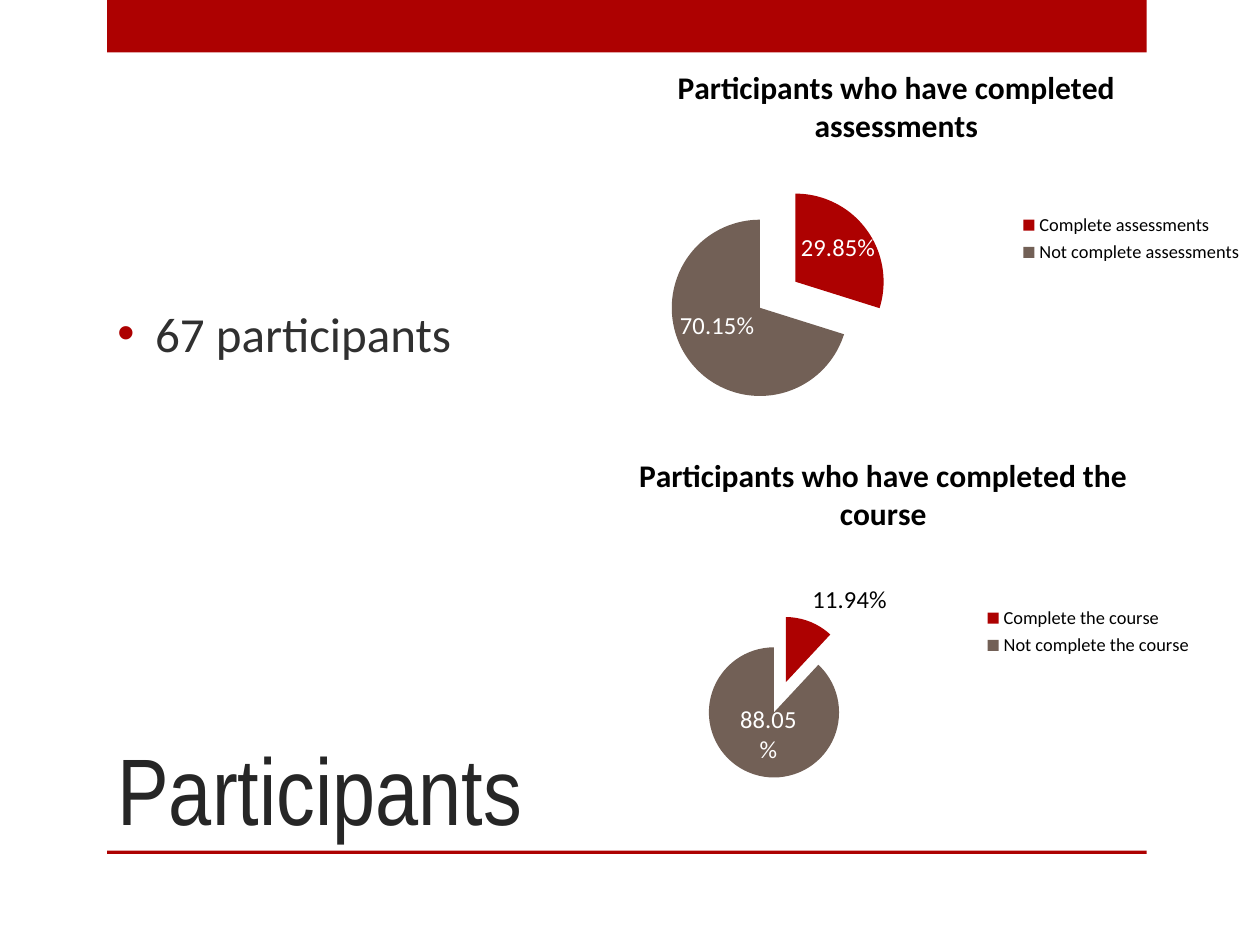
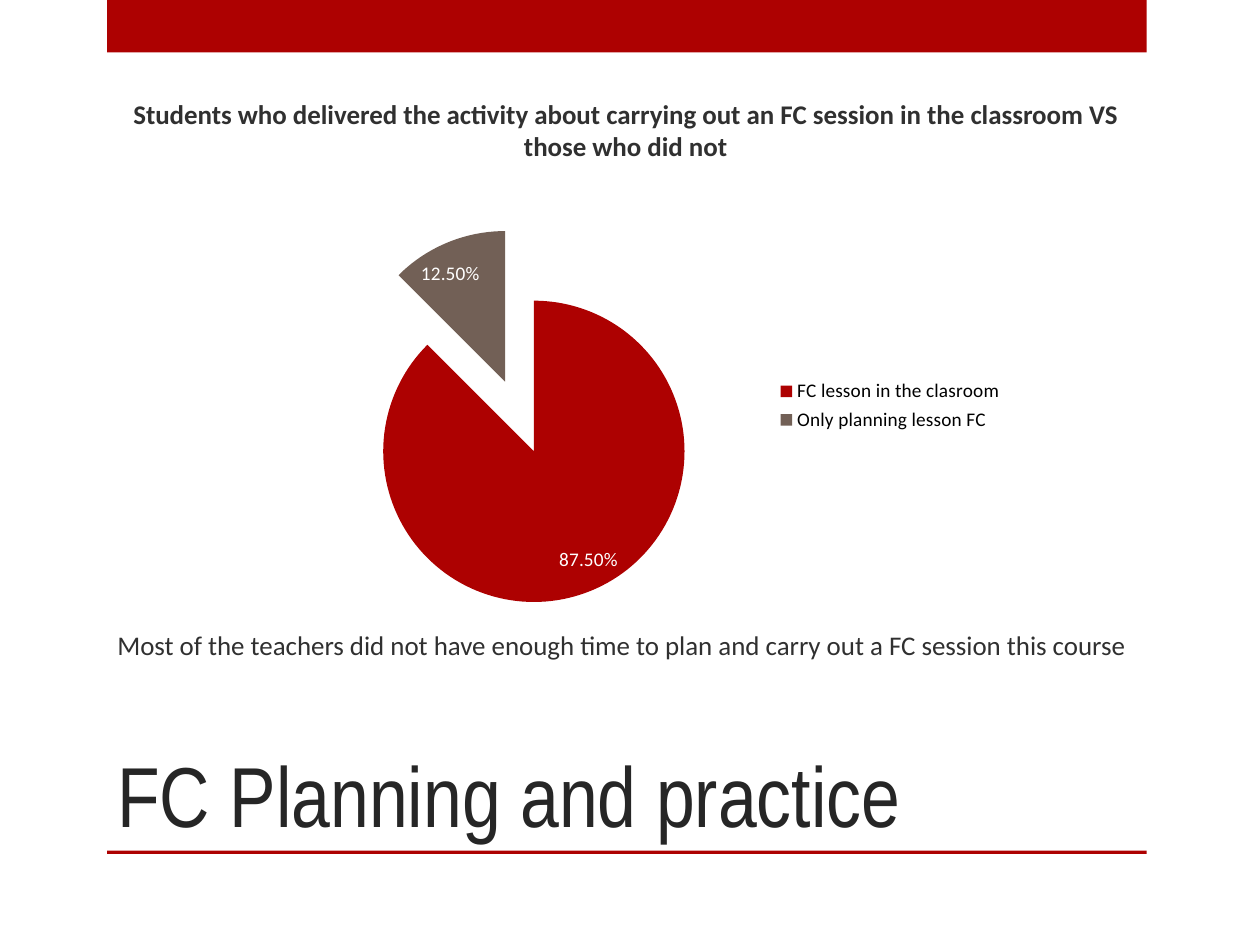
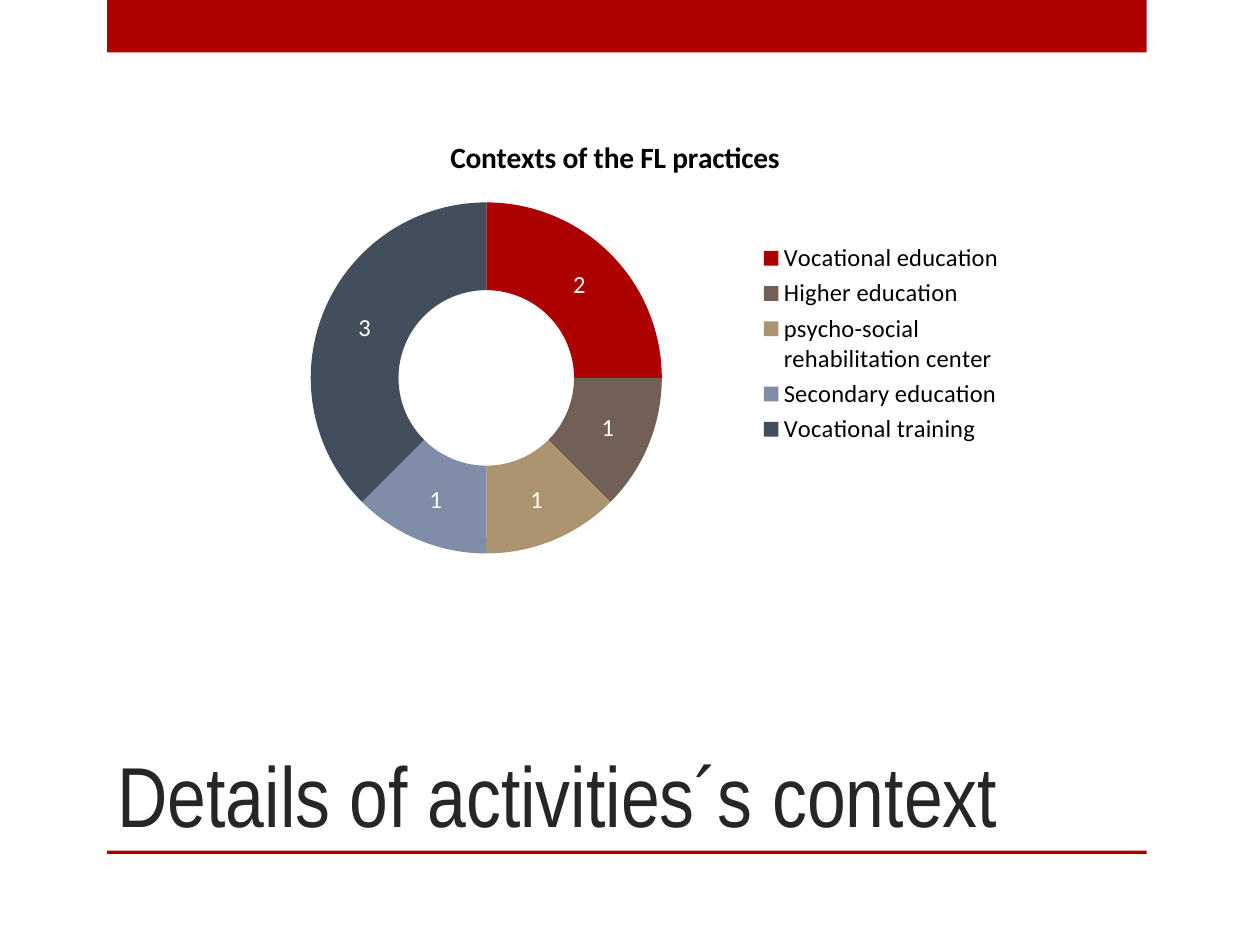
from lxml import etree
from pptx import Presentation
from pptx.chart.data import CategoryChartData
from pptx.dml.color import RGBColor
from pptx.enum.chart import XL_CHART_TYPE, XL_LABEL_POSITION, XL_LEGEND_POSITION
from pptx.enum.shapes import MSO_SHAPE
from pptx.enum.text import MSO_ANCHOR, PP_ALIGN
from pptx.oxml import parse_xml
from pptx.oxml.ns import qn
from pptx.util import Pt

PIE, RING = XL_CHART_TYPE.PIE, XL_CHART_TYPE.DOUGHNUT
MID, BEST, OUT_END = (XL_LABEL_POSITION.CENTER, XL_LABEL_POSITION.BEST_FIT,
                      XL_LABEL_POSITION.OUTSIDE_END)
RIGHT = XL_LEGEND_POSITION.RIGHT
RECT = MSO_SHAPE.RECTANGLE
MIDDLE, BOTTOM = MSO_ANCHOR.MIDDLE, MSO_ANCHOR.BOTTOM
LEFT, CENTER = PP_ALIGN.LEFT, PP_ALIGN.CENTER

RED, BROWN = "AD0101", "726056"
HUES = [RED, BROWN, "AC956E", "808DA9", "424E5B"]
INK, DARK, BLACK, WHITE = "303030", "262626", "000000", "FFFFFF"
BODY, HEAD = "Calibri", "Arial Narrow"
PERCENT = "0.00%"
EDGE = 60


def paint(hue):
    return RGBColor.from_string(hue)


def style(font, hue, **vals):
    for name, val in vals.items():
        setattr(font, name, val)
    font.color.rgb = paint(hue)


def layout(**vals):
    space = etree.Element(qn("c:layout"))
    rule = etree.SubElement(space, qn("c:manualLayout"))
    for name, val in vals.items():
        etree.SubElement(rule, qn("c:" + name), val=str(val))
    return parse_xml(etree.tostring(space))


class Deck:
    def __init__(self):
        self.show = Presentation()
        self.show.slide_width, self.show.slide_height = Pt(720), Pt(540)
        self.slide = None

    def page(self, title, size):
        self.slide = self.show.slides.add_slide(self.show.slide_layouts[6])
        self.band(0, 30)
        self.band(486, 2)
        self.text(title, (EDGE, 360, 534, 126), size, DARK, BOTTOM, name=HEAD)

    def band(self, top, high):
        bar = self.slide.shapes.add_shape(RECT, Pt(61.25), Pt(top), Pt(594), Pt(high))
        bar.shadow.inherit = False
        bar.fill.solid()
        bar.fill.fore_color.rgb = paint(RED)
        bar.line.fill.background()

    def text(self, words, box, size, hue=INK, anchor=MIDDLE, align=LEFT, name=BODY, bold=False):
        frame = self.slide.shapes.add_textbox(*map(Pt, box)).text_frame
        frame.word_wrap = True
        frame.vertical_anchor = anchor
        para = frame.paragraphs[0]
        para.alignment = align
        run = para.add_run()
        run.text = words
        style(run.font, hue, size=Pt(size), name=name, bold=bold)
        return para

    def bullet(self, words, box, size):
        props = self.text(words, box, size)._p.get_or_add_pPr()
        props.set("marL", str(Pt(21.6)))
        props.set("indent", str(-Pt(21.6)))
        tint = etree.SubElement(props, qn("a:buClr"))
        etree.SubElement(tint, qn("a:srgbClr"), val=RED)
        etree.SubElement(props, qn("a:buFont"), typeface="Arial")
        etree.SubElement(props, qn("a:buChar"), char="•")

    def chart(self, kind, box, plot, data, size, title=None, head=18, key=None,
              form=PERCENT, spot=None, hue=WHITE, label=None):
        feed = CategoryChartData(number_format=form)
        feed.categories = list(data)
        feed.add_series("Series 1", list(data.values()))
        chart = self.slide.shapes.add_chart(kind, *map(Pt, box), feed).chart
        style(chart.font, BLACK, size=Pt(size), name=BODY)
        chart.has_title = title is not None
        if title:
            chart.chart_title.text_frame.text = title
            run = chart.chart_title.text_frame.paragraphs[0].runs[0]
            style(run.font, BLACK, size=Pt(head), name=BODY, bold=True)
        chart.has_legend = True
        chart.legend.position = RIGHT
        chart.legend.include_in_layout = False
        style(chart.legend.font, BLACK, size=Pt(key or size), name=BODY)
        chart.plots[0].vary_by_categories = True
        series = chart.plots[0].series[0]
        for i, tint in enumerate(HUES[:len(data)]):
            fill = series.points[i].format.fill
            fill.solid()
            fill.fore_color.rgb = paint(tint)
        marks = series.data_labels
        marks.show_value = True
        marks.number_format = form
        marks.number_format_is_linked = False
        style(marks.font, hue, size=Pt(label or size), name=BODY)
        if spot is not None:
            marks.position = spot
        for line in marks._element.findall(qn("c:showLeaderLines")):
            line.set("val", "0")
        if kind == PIE:
            gap = etree.Element(qn("c:explosion"), val="25")
            series._element.get_or_add_spPr().addnext(gap)
        self.place(chart, plot)
        return series

    def place(self, chart, plot):
        area = chart._chartSpace.chart.plotArea
        for old in area.findall(qn("c:layout")):
            area.remove(old)
        area.insert(0, layout(layoutTarget="inner", xMode="edge", yMode="edge",
                              **dict(zip("xywh", plot))))

    def nudge(self, series, i, x, y, size):
        mark = series.points[i].data_label
        style(mark.font, WHITE, size=Pt(size), name=BODY)
        mark.position = MID
        mark._get_or_add_dLbl().find(qn("c:idx")).addnext(layout(x=x, y=y))


def main():
    deck = Deck()

    deck.page("Participants", 54)
    deck.bullet("67 participants", (EDGE, 57, 243, 266), 28)
    look = dict(size=10, key=10.5, label=14)
    tests = deck.chart(PIE, (306.75, 26, 411, 221), (0.18, 0.36, 0.31, 0.57),
                       {"Complete assessments": 0.2985, "Not complete assessments": 0.7015},
                       title="Participants who have completed assessments", spot=MID, **look)
    course = deck.chart(PIE, (320.4, 247.7, 368.6, 226.8), (0.21, 0.46, 0.26, 0.41),
                        {"Complete the course": 0.1194, "Not complete the course": 0.8805},
                        title="Participants who have completed the course",
                        spot=OUT_END, hue=BLACK, **look)
    for series, i, x in ((tests, 0, 0.01), (tests, 1, -0.01), (course, 1, 0.01)):
        deck.nudge(series, i, x, -0.02, 14)

    deck.page("FC Planning and practice", 48.6)
    deck.text("Students who delivered the activity about carrying out an FC session "
              "in the classroom VS those who did not",
              (EDGE, 54, 595, 40), 15.4, align=CENTER, bold=True)
    deck.text("Most of the teachers did not have enough time to plan and carry out "
              "a FC session this course", (EDGE, 348.5, 595, 40), 15.4)
    deck.chart(PIE, (150.5, 105.8, 430.5, 252), (0.09, 0.09, 0.5, 0.87),
               {"FC lesson in the clasroom": 0.875, "Only planning lesson FC": 0.125},
               size=11, spot=BEST)

    deck.page("Details of activities´s context", 48.6)
    deck.chart(RING, (121.7, 66.2, 459.4, 260.6), (0.12, 0.19, 0.44, 0.77),
               {"Vocational education": 2, "Higher education": 1,
                "psycho-social rehabilitation center": 1,
                "Secondary education": 1, "Vocational training": 3},
               size=14, title="Contexts of the FL practices", head=16.8, form="General")

    deck.show.save("out.pptx")


if __name__ == "__main__":
    main()
